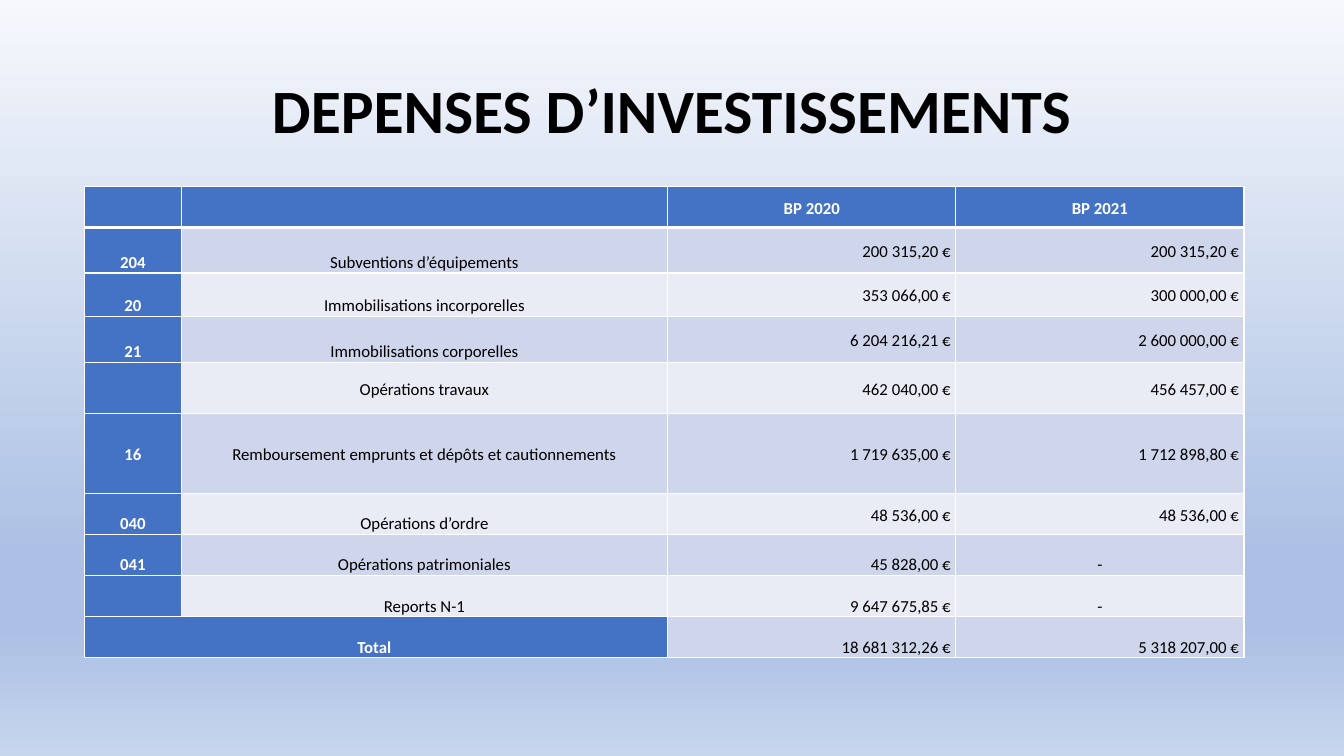
from lxml.etree import SubElement
from pptx import Presentation
from pptx.dml.color import RGBColor
from pptx.enum.text import MSO_ANCHOR, PP_ALIGN
from pptx.oxml.ns import qn
from pptx.util import Pt

FONT = "Calibri"
BLACK = RGBColor(0x00, 0x00, 0x00)
WHITE = RGBColor(0xFF, 0xFF, 0xFF)
BLUE = RGBColor(0x44, 0x72, 0xC4)
BANDS = (RGBColor(0xE9, 0xEB, 0xF5), RGBColor(0xCF, 0xD5, 0xEA))
SKY = (
    (0, RGBColor(0xF6, 0xF8, 0xFC)),
    (74, RGBColor(0xAB, 0xC0, 0xE4)),
    (83, RGBColor(0xAB, 0xC0, 0xE4)),
    (100, RGBColor(0xC7, 0xD5, 0xED)),
)

MID, LOW = MSO_ANCHOR.MIDDLE, MSO_ANCHOR.BOTTOM
COLUMNS = (69, 347.6, 205.8, 205.8)
# Row height, anchor of the labels, anchor of the amounts, texts
ROWS = (
    (29.3, MID, MID, ("", "", "BP 2020", "BP 2021")),
    (32.5, LOW, MID, ("204", "Subventions d’équipements", "200 315,20 €", "200 315,20 €")),
    (31.1, LOW, MID, ("20", "Immobilisations incorporelles", "353 066,00 €", "300 000,00 €")),
    (32.9, LOW, MID, ("21", "Immobilisations corporelles", "6 204 216,21 €", "2 600 000,00 €")),
    (36.4, MID, MID, ("", "Opérations travaux", "462 040,00 €", "456 457,00 €")),
    (57.1, MID, MID, ("16", "Remboursement emprunts et dépôts et cautionnements",
                      "1 719 635,00 €", "1 712 898,80 €")),
    (29.3, LOW, MID, ("040", "Opérations d’ordre", "48 536,00 €", "48 536,00 €")),
    (29.3, LOW, LOW, ("041", "Opérations patrimoniales", "45 828,00 €", "-")),
    (29.6, LOW, LOW, ("", "Reports N-1", "9 647 675,85 €", "-")),
    (29.3, LOW, LOW, ("Total ", "", "18 681 312,26 €", "5 318 207,00 €")),
)


def add_background(s):
    fill = s.background.fill
    fill.gradient()
    fill.gradient_angle = 270
    stops = s.element.find(".//" + qn("a:gsLst"))
    for stop in list(stops):
        stops.remove(stop)
    for percent, color in SKY:
        stop = SubElement(stops, qn("a:gs"), pos=str(percent * 1000))
        SubElement(stop, qn("a:srgbClr"), val=str(color))


def write(tf, text, size, color, bold, align, spacing):
    p = tf.paragraphs[0]
    p.alignment = align
    p.line_spacing = spacing
    r = p.add_run()
    r.text = text
    r.font.name = FONT
    r.font.size = Pt(size)
    r.font.bold = bold
    r.font.color.rgb = color
    return p


def add_title(s, x, y, w, h):
    tf = s.shapes.add_textbox(Pt(x), Pt(y), Pt(w), Pt(h)).text_frame
    tf.word_wrap = True
    tf.vertical_anchor = MID
    write(tf, "DEPENSES D’INVESTISSEMENTS", 44, BLACK, True, PP_ALIGN.CENTER, 0.9)


def set_borders(cell, heavy_sides):
    tcPr = cell._tc.get_or_add_tcPr()
    for side in ("L", "R", "T", "B"):
        width = Pt(3 if side in heavy_sides else 1)
        ln = SubElement(tcPr, qn("a:ln" + side), w=str(width))
        fill = SubElement(ln, qn("a:solidFill"))
        SubElement(fill, qn("a:srgbClr"), val=str(WHITE))


def add_budget_table(s, x, y):
    heights = [row[0] for row in ROWS]
    frame = s.shapes.add_table(len(ROWS), len(COLUMNS), Pt(x), Pt(y),
                               Pt(sum(COLUMNS)), Pt(sum(heights)))
    table = frame.table
    for column, width in zip(table.columns, COLUMNS):
        column.width = Pt(width)

    for i, (height, label_anchor, amount_anchor, texts) in enumerate(ROWS):
        table.rows[i].height = Pt(height)
        for j, text in enumerate(texts):
            cell = table.cell(i, j)
            heading = i == 0 or j == 0
            # Cell frame
            cell.margin_left = cell.margin_right = Pt(3.6)
            cell.margin_top = cell.margin_bottom = 0
            cell.vertical_anchor = label_anchor if j < 2 else amount_anchor
            set_borders(cell, {0: "B", 1: "T"}.get(i, ""))
            cell.fill.solid()
            cell.fill.fore_color.rgb = BLUE if heading else BANDS[i % 2]
            # Cell text
            if text:
                align = PP_ALIGN.RIGHT if text.endswith("€") else PP_ALIGN.CENTER
                p = write(cell.text_frame, text, 12, WHITE if heading else BLACK,
                          heading, align, 1.15)
                p.space_after = Pt(10)

    # The total label spans both label columns
    last = len(ROWS) - 1
    table.cell(last, 0).merge(table.cell(last, 1))


def main():
    prs = Presentation()
    prs.slide_width, prs.slide_height = Pt(960), Pt(540)
    s = prs.slides.add_slide(prs.slide_layouts[6])
    add_background(s)
    add_title(s, 66, 28.8, 828, 104.4)
    add_budget_table(s, 60.4, 133.2)
    prs.save("out.pptx")


if __name__ == "__main__":
    main()
